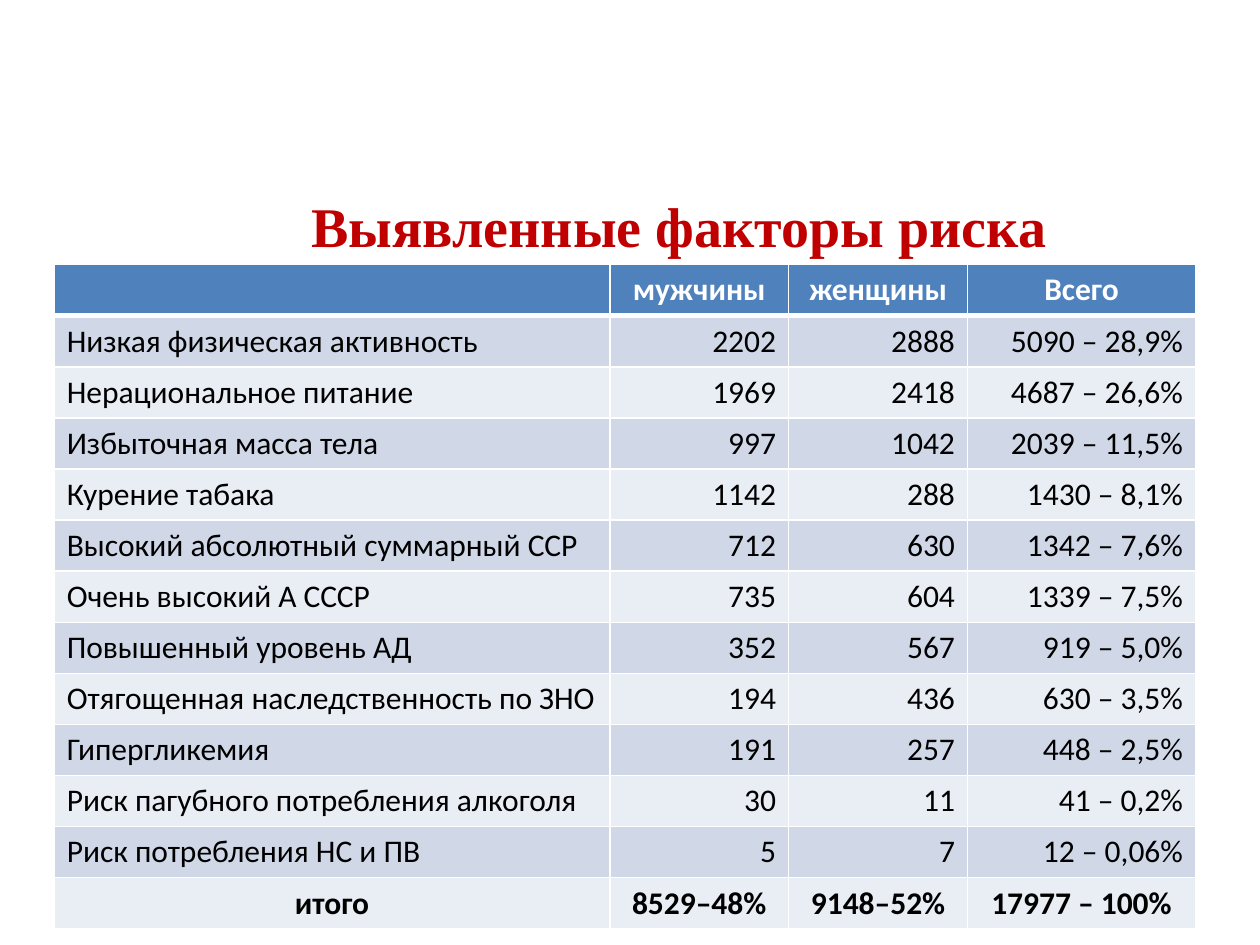
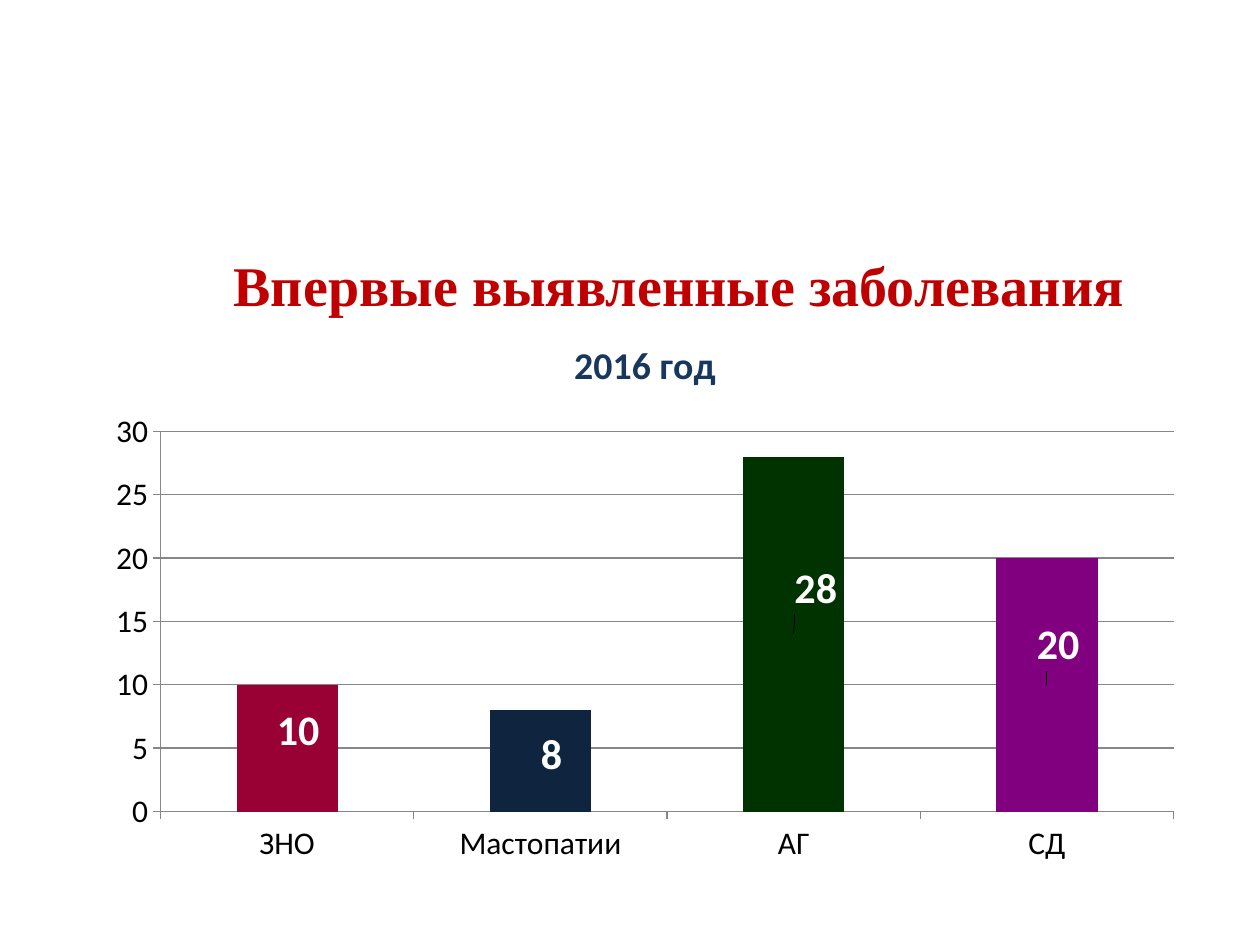
import dataclasses

import lxml.etree
import pptx
import pptx.chart.data
import pptx.dml.color
import pptx.enum.chart
import pptx.enum.text
import pptx.oxml
import pptx.oxml.ns
import pptx.util

Inches = pptx.util.Inches
Pt = pptx.util.Pt
Align = pptx.enum.text.PP_ALIGN
qn = pptx.oxml.ns.qn


@dataclasses.dataclass(frozen=True)
class Theme:
    heading_font: str = "Times New Roman"
    body_font: str = "Calibri"
    heading_size: float = 32
    body_size: float = 18
    chart_title_size: float = 21.6
    label_size: float = 24
    heading: str = "C00000"
    text: str = "000000"
    light: str = "FFFFFF"
    header_fill: str = "4F81BD"
    bands: tuple = ("D0D8E8", "E9EDF4")
    chart_title: str = "17375E"
    axis: str = "878787"
    bars: tuple = ("990033", "0F243E", "003300", "800080")


def rgb(code):
    return pptx.dml.color.RGBColor.from_string(code)


def style_font(font, name, size, color, bold=False):
    font.name, font.size, font.bold = name, Pt(size), bold
    font.color.rgb = rgb(color)


def set_borders(cell, color, bottom_width):
    """Draw 1 pt cell borders, with a chosen width at the bottom."""
    properties = cell._tc.get_or_add_tcPr()
    widths = {"a:lnL": 1, "a:lnR": 1, "a:lnT": 1, "a:lnB": bottom_width}
    for position, (tag, width) in enumerate(widths.items()):
        line = lxml.etree.Element(qn(tag), w=str(Pt(width)))
        fill = lxml.etree.SubElement(line, qn("a:solidFill"))
        lxml.etree.SubElement(fill, qn("a:srgbClr"), val=color)
        properties.insert(position, line)


def manual_layout(**settings):
    """Build a chart layout element from fractions of the chart size."""
    layout = lxml.etree.Element(qn("c:layout"))
    manual = lxml.etree.SubElement(layout, qn("c:manualLayout"))
    for tag, value in settings.items():
        lxml.etree.SubElement(manual, qn("c:" + tag), val=str(value))
    return layout


class SlideBuilder:
    def __init__(self, deck, theme):
        self.deck = deck
        self.theme = theme
        self.page = None

    def new_page(self):
        self.page = self.deck.slides.add_slide(self.deck.slide_layouts[6])

    def heading(self, text, top):
        theme = self.theme
        box = self.page.shapes.add_textbox(
            Inches(1.69), Inches(top), Inches(7.4), Inches(0.64))
        box.text_frame.word_wrap = True
        para = box.text_frame.paragraphs[0]
        para.text = text
        para.alignment = Align.CENTER
        style_font(para.runs[0].font, theme.heading_font,
                   theme.heading_size, theme.heading, True)

    def table(self, rows, left, top, widths, row_height):
        """Banded table: the first row is a header, the last one a total."""
        theme = self.theme
        table = self.page.shapes.add_table(
            len(rows), len(widths), Inches(left), Inches(top),
            Inches(sum(widths)), Inches(row_height * len(rows))).table
        table.first_row = table.horz_banding = False
        for column, width in zip(table.columns, widths):
            column.width = Inches(width)
        for r, row in enumerate(rows):
            header, total = r == 0, r == len(rows) - 1
            for c, text in enumerate(row):
                cell = table.cell(r, c)
                cell.fill.solid()
                cell.fill.fore_color.rgb = rgb(
                    theme.header_fill if header else theme.bands[(r - 1) % 2])
                set_borders(cell, theme.light, 3 if header else 1)
                para = cell.text_frame.paragraphs[0]
                para.text = text
                if header or total:
                    para.alignment = Align.CENTER
                else:
                    para.alignment = Align.RIGHT if c else Align.LEFT
                style_font(para.font, theme.body_font, theme.body_size,
                           theme.light if header else theme.text,
                           header or total)
                for span in para.runs:
                    style_font(span.font, theme.body_font, theme.body_size,
                               theme.light if header else theme.text,
                               header or total)

    def column_chart(self, title, values, label_shifts, left, top, width, height):
        theme = self.theme
        data = pptx.chart.data.CategoryChartData()
        data.categories = list(values)
        data.add_series(title, list(values.values()))
        chart = self.page.shapes.add_chart(
            pptx.enum.chart.XL_CHART_TYPE.COLUMN_CLUSTERED, Inches(left),
            Inches(top), Inches(width), Inches(height), data).chart
        style_font(chart.font, theme.body_font, theme.body_size, theme.text)
        chart.has_legend = False

        # Title
        chart.has_title = True
        chart.chart_title.include_in_layout = False
        para = chart.chart_title.text_frame.paragraphs[0]
        para.text = title
        style_font(para.runs[0].font, theme.body_font,
                   theme.chart_title_size, theme.chart_title, True)

        # Axes
        value_axis = chart.value_axis
        value_axis.minimum_scale, value_axis.maximum_scale = 0, 30
        value_axis.major_unit = 5
        value_axis.has_major_gridlines = True
        for line in (value_axis.major_gridlines.format.line,
                     value_axis.format.line, chart.category_axis.format.line):
            line.color.rgb = rgb(theme.axis)
            line.width = Pt(0.75)
        for axis in (value_axis, chart.category_axis):
            axis.major_tick_mark = pptx.enum.chart.XL_TICK_MARK.OUTSIDE

        # Plot area
        plot_area = chart._chartSpace.chart.plotArea
        for layout in plot_area.findall(qn("c:layout")):
            plot_area.remove(layout)
        plot_area.insert(0, manual_layout(
            layoutTarget="inner", xMode="edge", yMode="edge",
            x=0.06, y=0.21, w=0.92, h=0.68))

        # Bars and their labels
        plot = chart.plots[0]
        plot.gap_width = 150
        plot.vary_by_categories = False
        series = plot.series[0]
        series.invert_if_negative = False
        for index, (color, shift) in enumerate(zip(theme.bars, label_shifts)):
            point = series.points[index]
            point.format.fill.solid()
            point.format.fill.fore_color.rgb = rgb(color)
            label = point.data_label
            style_font(label.font, theme.body_font, theme.label_size,
                       theme.light, True)
            label.position = pptx.enum.chart.XL_LABEL_POSITION.CENTER
        for label, (x, y) in zip(series._element.iter(qn("c:dLbl")), label_shifts):
            label.insert(1, manual_layout(x=x, y=y))


def main():
    deck = pptx.Presentation()
    deck.slide_width, deck.slide_height = Inches(10), Inches(7.5)
    builder = SlideBuilder(deck, Theme())

    # Risk factors
    risk_rows = [
        ("", "мужчины", "женщины", "Всего"),
        ("Низкая физическая активность", "2202", "2888", "5090 – 28,9%"),
        ("Нерациональное питание", "1969", "2418", "4687 – 26,6%"),
        ("Избыточная масса тела", "997", "1042", "2039 – 11,5%"),
        ("Курение табака", "1142", "288", "1430 – 8,1%"),
        ("Высокий абсолютный суммарный ССР", "712", "630", "1342 – 7,6%"),
        ("Очень высокий А СССР", "735", "604", "1339 – 7,5%"),
        ("Повышенный уровень АД", "352", "567", "919 – 5,0%"),
        ("Отягощенная наследственность по ЗНО", "194", "436", "630 – 3,5%"),
        ("Гипергликемия", "191", "257", "448 – 2,5%"),
        ("Риск пагубного потребления алкоголя", "30", "11", "41 – 0,2%"),
        ("Риск потребления НС и ПВ", "5", "7", "12 – 0,06%"),
        ("итого", "8529–48%", "9148–52%", "17977 – 100%"),
    ]
    builder.new_page()
    builder.table(risk_rows, 0.43, 2.1, (4.41, 1.42, 1.42, 1.81), 0.4)
    builder.heading("Выявленные факторы риска", 1.47)

    # Newly found diseases
    diseases = {"ЗНО": 10, "Мастопатии": 8, "АГ": 28, "СД": 20}
    label_shifts = [(0.01, -0.03), (0.01, -0.01), (0.02, -0.08), (0.01, -0.07)]
    builder.new_page()
    builder.heading("Впервые выявленные заболевания", 1.94)
    builder.column_chart("2016 год", diseases, label_shifts,
                         0.75, 2.49, 8.74, 4.44)

    deck.save("out.pptx")


if __name__ == "__main__":
    main()
